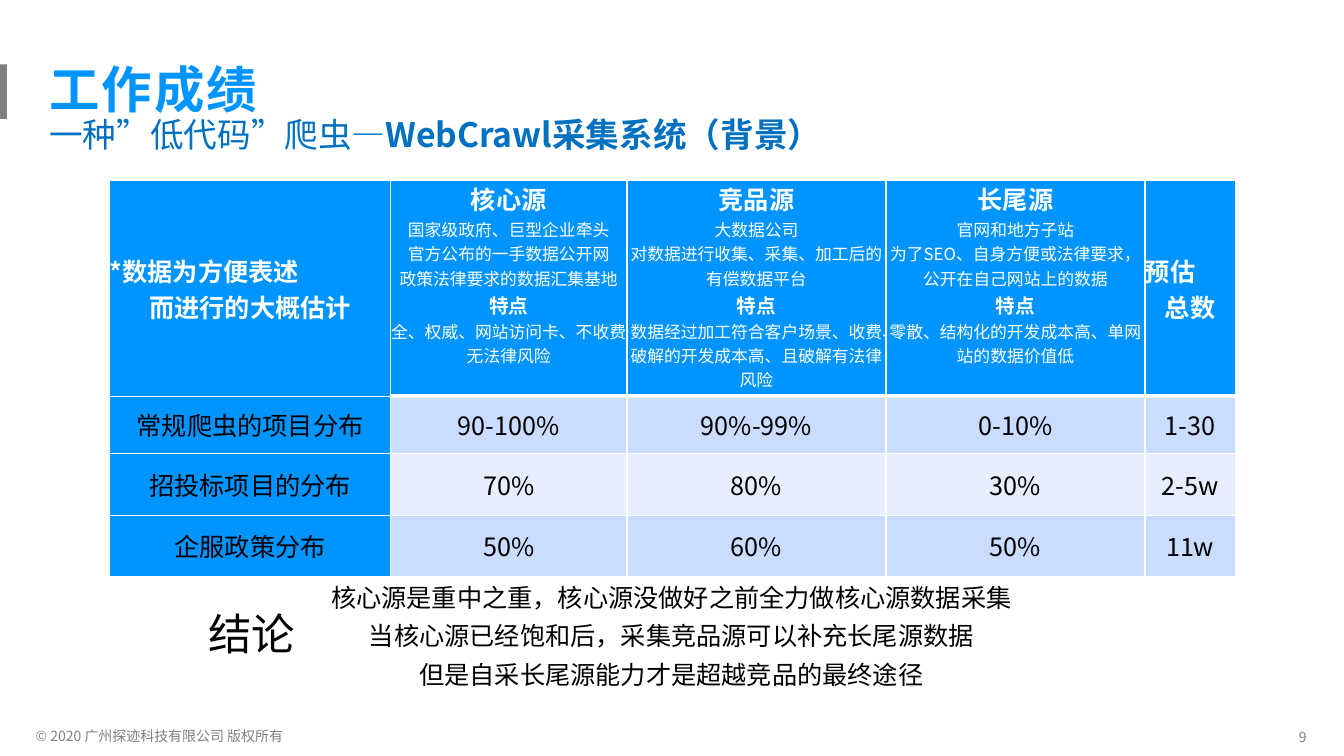
"""Build the slide on crawler sources and their share of each project type."""
from lxml.etree import SubElement
from pptx import Presentation
from pptx.dml.color import RGBColor
from pptx.enum.shapes import MSO_SHAPE
from pptx.enum.text import MSO_ANCHOR, MSO_AUTO_SIZE, PP_ALIGN
from pptx.oxml import parse_xml
from pptx.oxml.ns import nsdecls, qn
from pptx.util import Pt

FONT = "Noto Sans CJK SC"
BLUE = RGBColor(0x00, 0x94, 0xFF)
DEEP_BLUE = RGBColor(0x00, 0x70, 0xC0)
GRAY = RGBColor(0x80, 0x80, 0x80)
BLACK = RGBColor(0, 0, 0)
WHITE = RGBColor(0xFF, 0xFF, 0xFF)
BANDS = [RGBColor(0xCA, 0xDC, 0xFF), RGBColor(0xE6, 0xEE, 0xFF)]

TITLE = "工作成绩"
SUBTITLE = ["一种”低代码”爬虫—", "WebCrawl采集系统（背景）"]
COPYRIGHT = "© 2020 广州探迹科技有限公司 版权所有"
PAGE = "9"
NOTE = ["*数据为方便表述", "而进行的大概估计"]
TOTAL = ["预估", "总数"]
FEATURES = "特点"
SOURCES = [
    ["核心源", "国家级政府、巨型企业牵头", "官方公布的一手数据公开网",
     "政策法律要求的数据汇集基地", FEATURES, "全、权威、网站访问卡、不收费、无法律风险"],
    ["竞品源", "大数据公司", "对数据进行收集、采集、加工后的有偿数据平台", FEATURES,
     "数据经过加工符合客户场景、收费、破解的开发成本高、且破解有法律风险"],
    ["长尾源", "官网和地方子站", "为了SEO、自身方便或法律要求，公开在自己网站上的数据",
     FEATURES, "零散、结构化的开发成本高、单网站的数据价值低"],
]
PROJECTS = [
    ["常规爬虫的项目分布", "90-100%", "90%-99%", "0-10%", "1-30"],
    ["招投标项目的分布", "70%", "80%", "30%", "2-5w"],
    ["企服政策分布", "50%", "60%", "50%", "11w"],
]
CONCLUSION = "结论"
FINDINGS = [
    "核心源是重中之重，核心源没做好之前全力做核心源数据采集",
    "当核心源已经饱和后，采集竞品源可以补充长尾源数据",
    "但是自采长尾源能力才是超越竞品的最终途径",
]
COLUMN_WIDTHS = [200.5, 169, 185, 185, 64.5]
ROW_HEIGHTS = [154, 41, 44, 44]
FINDINGS_CENTER, FINDINGS_TOP, FINDINGS_PITCH = 479.5, 416, 27.4


def style(run, size, color, bold=False):
    run.font.size = Pt(size)
    run.font.bold = bold
    run.font.color.rgb = color
    run.font.name = FONT
    SubElement(run.font._element, qn("a:ea"), typeface=FONT)


def fill_frame(frame, lines, color, inset=0.0, align=PP_ALIGN.LEFT, wrap=False):
    """Write (text, size, bold) lines, one paragraph each."""
    frame.word_wrap = wrap
    frame.auto_size = MSO_AUTO_SIZE.NONE
    frame.vertical_anchor = MSO_ANCHOR.TOP
    frame.margin_left = frame.margin_right = Pt(inset)
    frame.margin_top = frame.margin_bottom = Pt(inset)
    write_lines(frame, lines, color, align)


def write_lines(frame, lines, color, align):
    frame.text = "\n".join(text for text, _, _ in lines)
    for paragraph, (_, size, bold) in zip(frame.paragraphs, lines):
        paragraph.alignment = align
        for run in paragraph.runs:
            style(run, size, color, bold)


def add_text(slide, box, text, size, color, **layout):
    frame = slide.shapes.add_textbox(*map(Pt, box)).text_frame
    fill_frame(frame, [(text, size, False)], color, **layout)
    return frame


def fill_cell(cell, lines, fill, color, bottom=1, top=1, anchor=MSO_ANCHOR.MIDDLE):
    cell.margin_left = cell.margin_right = cell.margin_top = cell.margin_bottom = 0
    cell.vertical_anchor = anchor
    cell.fill.solid()
    cell.fill.fore_color.rgb = fill
    write_lines(cell.text_frame, lines, color, PP_ALIGN.CENTER)
    properties = cell._tc.get_or_add_tcPr()
    borders = {"lnL": 1, "lnR": 1, "lnT": top, "lnB": bottom}
    for position, (edge, width) in enumerate(borders.items()):
        properties.insert(position, parse_xml(
            f'<a:{edge} {nsdecls("a")} w="{Pt(width)}"><a:solidFill>'
            f'<a:srgbClr val="{WHITE}"/></a:solidFill></a:{edge}>'))


def add_heading(slide):
    title = slide.shapes.title
    title.left, title.top, title.width, title.height = map(Pt, (31.7, 29.5, 343.5, 57))
    fill_frame(title.text_frame, [(TITLE, 36, True)], BLUE, inset=3.6, wrap=True)
    heading = title.text_frame.paragraphs[0]
    heading.line_spacing = 1.2
    heading.runs[0].font._element.set("spc", "150")

    bar = slide.shapes.add_shape(MSO_SHAPE.RECTANGLE, Pt(0), Pt(46), Pt(5), Pt(39))
    bar.shadow.inherit = False
    bar.fill.solid()
    bar.fill.fore_color.rgb = GRAY
    bar.line.fill.background()

    subtitle = add_text(slide, (31.7, 77.8, 690.5, 40.3), SUBTITLE[0], 24, DEEP_BLUE,
                        inset=3.6, wrap=True)
    system = subtitle.paragraphs[0].add_run()
    system.text = SUBTITLE[1]
    style(system, 24, DEEP_BLUE, True)


def add_source_table(slide):
    table = slide.shapes.add_table(
        len(ROW_HEIGHTS), len(COLUMN_WIDTHS), Pt(78.4), Pt(129),
        Pt(sum(COLUMN_WIDTHS)), Pt(sum(ROW_HEIGHTS))).table
    table.first_row = table.horz_banding = False
    for column, width in zip(table.columns, COLUMN_WIDTHS):
        column.width = Pt(width)
    for row, height in zip(table.rows, ROW_HEIGHTS):
        row.height = Pt(height)

    for index, lines, rule in ((0, NOTE, 1), (4, TOTAL, 3)):
        cell = table.cell(0, index)
        fill_cell(cell, [(line, 18, True) for line in lines], BLUE, WHITE, bottom=rule)
        cell.text_frame.paragraphs[0].alignment = PP_ALIGN.LEFT

    for index, (name, *details) in enumerate(SOURCES, 1):
        lines = [(name, 18, True)]
        lines += [(text, 14, True) if text == FEATURES else (text, 12, False)
                  for text in details]
        fill_cell(table.cell(0, index), lines, BLUE, WHITE, bottom=3,
                  anchor=MSO_ANCHOR.TOP)

    for row, project in enumerate(PROJECTS, 1):
        for column, value in enumerate(project):
            fill = BANDS[(row - 1) % 2] if column else BLUE
            top = 3 if row == 1 and column else 1
            fill_cell(table.cell(row, column), [(value, 18, False)], fill, BLACK, top=top)


def add_conclusion(slide):
    add_text(slide, (149, 433.5, 64, 44), CONCLUSION, 31, BLACK)
    for index, finding in enumerate(FINDINGS):
        width = 18 * len(finding)
        box = (FINDINGS_CENTER - width / 2, FINDINGS_TOP + index * FINDINGS_PITCH, width, 26)
        add_text(slide, box, finding, 18, BLACK, align=PP_ALIGN.CENTER)


def main():
    deck = Presentation()
    deck.slide_width, deck.slide_height = Pt(960), Pt(540)
    slide = deck.slides.add_slide(deck.slide_layouts[5])
    add_heading(slide)
    add_source_table(slide)
    add_conclusion(slide)
    add_text(slide, (25.5, 519.5, 181.5, 14), COPYRIGHT, 10, GRAY)
    add_text(slide, (923, 517, 14, 19.5), PAGE, 10, GRAY, inset=3.6, align=PP_ALIGN.RIGHT)
    deck.save("out.pptx")


if __name__ == "__main__":
    main()
